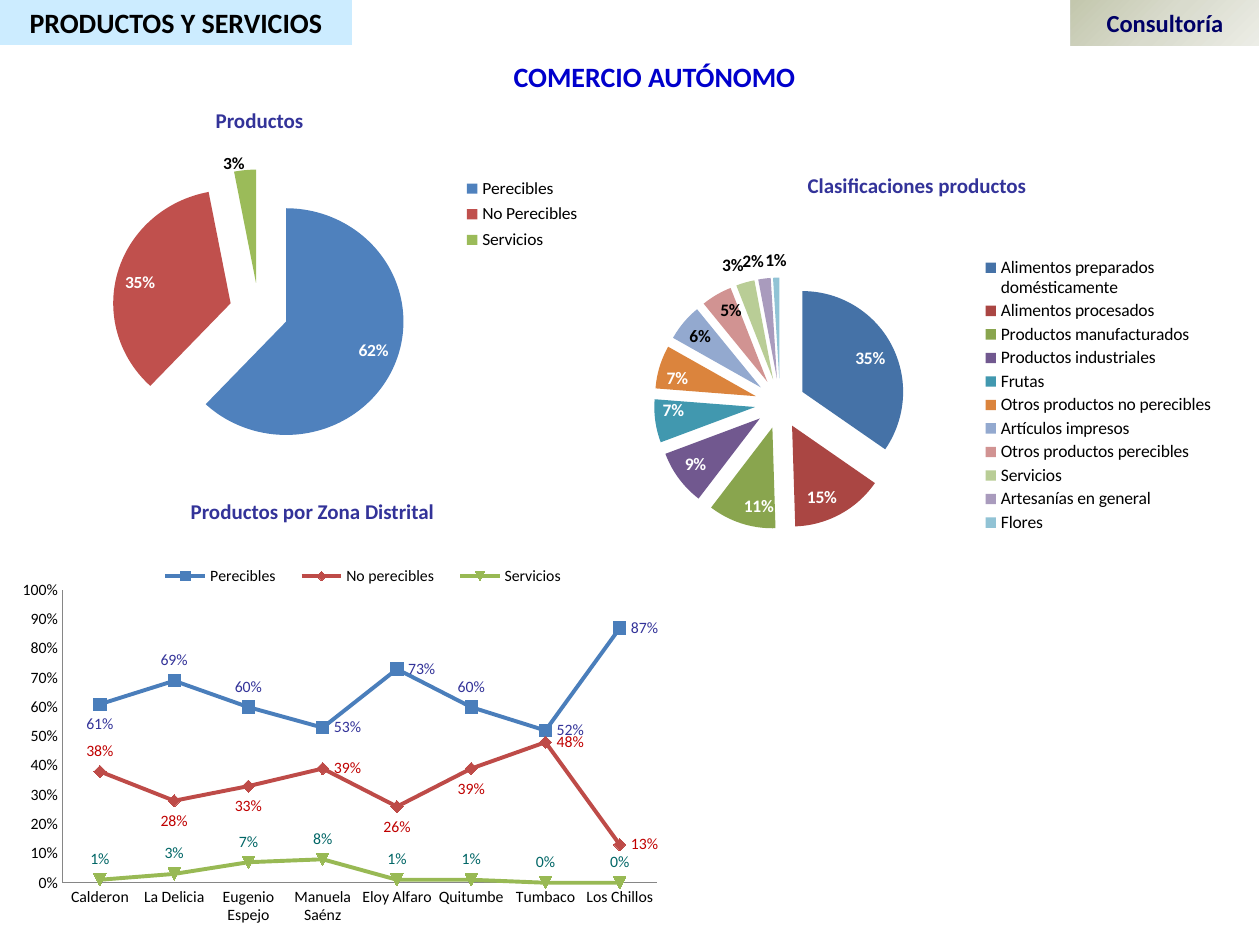
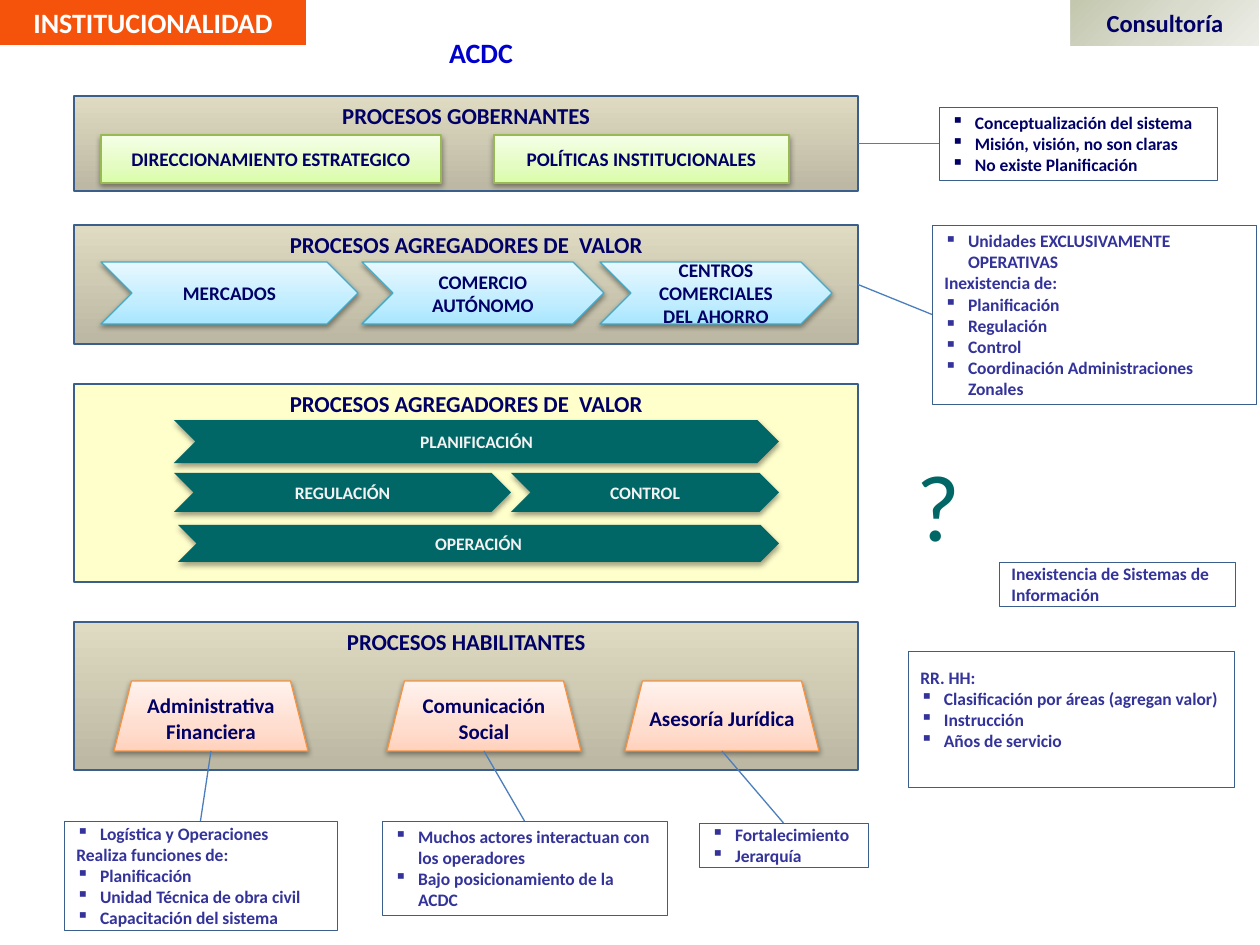
from dataclasses import dataclass

from pptx import Presentation
from pptx.chart.data import CategoryChartData
from pptx.dml.color import RGBColor
from pptx.enum.chart import XL_CHART_TYPE as Chart, XL_LABEL_POSITION as Spot
from pptx.enum.chart import XL_LEGEND_POSITION as LegendSide, XL_TICK_MARK as Tick
from pptx.enum.shapes import MSO_CONNECTOR as Link, MSO_SHAPE as Preset
from pptx.enum.text import MSO_ANCHOR as Anchor, PP_ALIGN as Align
from pptx.oxml import parse_xml
from pptx.oxml.ns import nsdecls, qn
from pptx.util import Pt

PX = 914400 / 126


@dataclass(frozen=True)
class Theme:
    font: str = "Calibri"
    navy: str = "000066"
    indigo: str = "333399"
    blue: str = "0000CC"
    teal: str = "006666"
    black: str = "000000"
    white: str = "FFFFFF"
    pale: str = "F2F2F2"
    sky: str = "CCECFF"
    orange: str = "F5530B"
    cream: str = "FFFFCC"
    red: str = "C00000"
    outline: str = "3A5F8C"
    link: str = "4B7EBC"
    axis: str = "868686"
    stone: tuple = ((4, "BCB8A3"), (99, "DFDBC2"))
    lime: tuple = ((0, "DAFDA7"), (35, "E4FCC2"), (100, "F5FFE7"))
    aqua: tuple = ((0, "A7E6FF"), (35, "C1EDFF"), (100, "E7F8FF"))
    peach: tuple = ((0, "FFD2BD"), (35, "FFDED0"), (100, "FFF2ED"))
    sage: tuple = ((0, "C3C7AD"), (50, "D9DBCD"), (100, "ECEDE6"))
    trio: tuple = ("4F81BD", "C0504D", "9BBB59")
    lines: tuple = ("4A7EBB", "BE4B48", "98B954")
    eleven: tuple = ("4572A7", "AA4643", "89A54E", "71588F", "4198AF", "DB843D",
                     "93A9CF", "D19392", "B9CD96", "A99BBD", "91C3D5")
    tiny: int = 9
    small: int = 10
    item: int = 11
    caption: int = 12
    panel: int = 13
    brand: int = 14
    title: int = 16
    huge: int = 54


T = Theme()
UP = '<a:lin ang="16200000" scaled="0"/>'
RADIAL = '<a:path path="circle"><a:fillToRect r="100000" b="100000"/></a:path>'
LOOKS = {
    "title": dict(size=T.title, color=T.blue, anchor=Anchor.TOP),
    "caption": dict(size=T.caption, color=T.indigo, anchor=Anchor.TOP),
    "doubt": dict(size=T.huge, color=T.teal, anchor=Anchor.TOP, bold=False),
    "products": dict(size=T.title, color=T.black, fill=T.sky),
    "institution": dict(size=T.title, color=T.white, fill=T.orange),
    "brand": dict(size=T.brand, color=T.navy, fill=T.sage, sweep=RADIAL),
    "stone": dict(size=T.panel, color=T.navy, fill=T.stone, line=T.outline, anchor=Anchor.TOP),
    "cream": dict(size=T.panel, color=T.navy, fill=T.cream, line=T.outline, anchor=Anchor.TOP),
    "lime": dict(size=T.item, color=T.navy, fill=T.lime, line="98B955", shadow=True),
    "aqua": dict(size=T.item, color=T.navy, fill=T.aqua, line="46AAC5", shadow=True),
    "peach": dict(size=T.caption, color=T.navy, fill=T.peach, line="F69240", shadow=True),
    "teal": dict(size=T.small, color=T.pale, fill=T.teal, shadow=True),
    "note": dict(size=T.small, color=T.indigo, fill=T.white, line=T.outline,
                 weight=0.25, align=Align.LEFT),
}
LOOKS["navy note"] = LOOKS["note"] | dict(color=T.navy)


def block(shapes, preset, place, text, look, bottom=6):
    style = LOOKS[look]
    box = [round(n * PX) for n in place]
    if preset is None:
        shape = shapes.add_textbox(*box)
    else:
        shape = shapes.add_shape(preset, *box)
        shape.shadow.inherit = False
        if isinstance(style["fill"], str):
            shape.fill.solid()
            shape.fill.fore_color.rgb = RGBColor.from_string(style["fill"])
        else:
            stops = "".join(f'<a:gs pos="{at * 1000}"><a:srgbClr val="{tone}"/></a:gs>'
                            for at, tone in style["fill"])
            shape.fill.background()
            blank = shape._element.spPr.find(qn("a:noFill"))
            blank.getparent().replace(blank, parse_xml(
                f'<a:gradFill {nsdecls("a")} rotWithShape="1"><a:gsLst>{stops}</a:gsLst>'
                f'{style.get("sweep", UP)}</a:gradFill>'))
        if "line" in style:
            shape.line.color.rgb = RGBColor.from_string(style["line"])
            shape.line.width = Pt(style.get("weight", 0.75))
        else:
            shape.line.fill.background()
        if "shadow" in style:
            shape._element.spPr.find(qn("a:effectLst")).append(parse_xml(
                f'<a:outerShdw {nsdecls("a")} blurRad="40000" dist="20000" dir="5400000" '
                'rotWithShape="0"><a:srgbClr val="000000"><a:alpha val="38000"/>'
                '</a:srgbClr></a:outerShdw>'))
    frame = shape.text_frame
    for name, value in dict(word_wrap=True, margin_bottom=round(bottom * PX),
                            vertical_anchor=style.get("anchor", Anchor.MIDDLE)).items():
        setattr(frame, name, value)
    for number, words in enumerate(text.split("\n")):
        paragraph = frame.add_paragraph() if number else frame.paragraphs[0]
        paragraph.alignment = style.get("align", Align.CENTER)
        run = paragraph.add_run()
        run.text = words.lstrip("▪")
        for name, value in dict(name=T.font, size=Pt(style["size"]),
                                bold=style.get("bold", True)).items():
            setattr(run.font, name, value)
        run.font.color.rgb = RGBColor.from_string(style["color"])
        if words.startswith("▪"):
            props = paragraph._p.get_or_add_pPr()
            props.set("marL", "171450")
            props.set("indent", "-171450")
            props.append(parse_xml(f'<a:buChar {nsdecls("a")} char="▪"/>'))
    return shape


def add_graph(shapes, kind, place, data, size, plot_area, legend_area, side):
    chart = shapes.add_chart(kind, *[round(n * PX) for n in place], data).chart
    chart.has_title = False
    chart.has_legend = True
    chart.legend.position = side
    chart.legend.include_in_layout = False
    for name, value in dict(name=T.font, size=Pt(size)).items():
        setattr(chart.font, name, value)
    chart.font.color.rgb = RGBColor.from_string(T.black)
    space = chart._chartSpace
    for tag, index, target, area in (("c:plotArea", 0, '<c:layoutTarget val="inner"/>', plot_area),
                                     ("c:legend", 1, "", legend_area)):
        part = next(space.iter(qn(tag)))
        for old in part.findall(qn("c:layout")):
            part.remove(old)
        x, y, w, h = area
        part.insert(index, parse_xml(
            f'<c:layout {nsdecls("c")}><c:manualLayout>{target}<c:xMode val="edge"/>'
            f'<c:yMode val="edge"/><c:x val="{x}"/><c:y val="{y}"/><c:w val="{w}"/>'
            f'<c:h val="{h}"/></c:manualLayout></c:layout>'))
    return chart


deck = Presentation()
deck.slide_width, deck.slide_height = round(1260 * PX), round(945 * PX)
commerce, agency = [deck.slides.add_slide(deck.slide_layouts[6]).shapes for _ in range(2)]
for page, band, width, look in ((commerce, "PRODUCTOS Y SERVICIOS", 352, "products"),
                                (agency, "INSTITUCIONALIDAD", 306, "institution")):
    block(page, Preset.RECTANGLE, (0, 0, width, 45), band, look)
    block(page, Preset.RECTANGLE, (1071, 0, 188, 46), "Consultoría", "brand")

for place, words, look in (((461, 53, 387, 47), "COMERCIO AUTÓNOMO", "title"),
                           ((748, 166, 338, 38), "Clasificaciones productos", "caption"),
                           ((111, 101, 297, 38), "Productos", "caption"),
                           ((164, 492, 297, 38), "Productos por Zona Distrital", "caption")):
    block(commerce, None, place, words, look)

inside, outside = Spot.INSIDE_END, Spot.OUTSIDE_END
pies = (
    ((54, 144, 532, 309), (0, 0.05, 0.77, 0.95), (0.76, 0.06, 0.25, 0.28), T.trio,
     (("Perecibles", 62), ("No Perecibles", 35), ("Servicios", 3)), 2, 2),
    ((551, 234, 684, 336), (0.15, 0.13, 0.37, 0.75), (0.62, 0.06, 0.36, 0.84), T.eleven,
     (("Alimentos preparados domésticamente", 35), ("Alimentos procesados", 15),
      ("Productos manufacturados", 11), ("Productos industriales", 9), ("Frutas", 7),
      ("Otros productos no perecibles", 7), ("Artículos impresos", 6),
      ("Otros productos perecibles", 5), ("Servicios", 3), ("Artesanías en general", 2),
      ("Flores", 1)), 6, 8),
)
for place, plot_area, legend_area, tones, shares, white_labels, inner_labels in pies:
    data = CategoryChartData(number_format="0")
    data.categories = [name for name, _ in shares]
    data.add_series("Series 1", [share for _, share in shares])
    pie = add_graph(commerce, Chart.PIE, place, data, T.small, plot_area, legend_area,
                    LegendSide.RIGHT)
    pie.plots[0].vary_by_categories = True
    slices = pie.plots[0].series[0]
    slices._element.find(qn("c:tx")).addnext(parse_xml(f'<c:explosion {nsdecls("c")} val="25"/>'))
    for number, tone in enumerate(tones):
        point = slices.points[number]
        point.format.fill.solid()
        point.format.fill.fore_color.rgb = RGBColor.from_string(tone)
        label = point.data_label
        for name, value in dict(name=T.font, size=Pt(T.small), bold=True).items():
            setattr(label.font, name, value)
        label.font.color.rgb = RGBColor.from_string(T.white if number < white_labels else T.black)
        label.position = inside if number < inner_labels else outside
    for mark in slices._element.iter(qn("c:dLbl")):
        mark.find(qn("c:showVal")).set("val", "0")
        mark.find(qn("c:showPercent")).set("val", "1")

over, under, right = Spot.ABOVE, Spot.BELOW, Spot.RIGHT
zones = (
    ("Perecibles", (0.61, 0.69, 0.6, 0.53, 0.73, 0.6, 0.52, 0.87), T.indigo,
     (under, over, over, right, right, over, right, right)),
    ("No perecibles", (0.38, 0.28, 0.33, 0.39, 0.26, 0.39, 0.48, 0.13), T.red,
     (over, under, under, right, under, under, right, right)),
    ("Servicios", (0.01, 0.03, 0.07, 0.08, 0.01, 0.01, 0, 0), T.teal, (over,) * 8),
)
data = CategoryChartData(number_format="0%")
data.categories = ["Calderon", "La Delicia", "Eugenio Espejo", "Manuela Saénz",
                   "Eloy Alfaro", "Quitumbe", "Tumbaco", "Los Chillos"]
for name, values, _, _ in zones:
    data.add_series(name, values)
districts = add_graph(commerce, Chart.LINE_MARKERS, (15, 530, 683, 401), data, T.tiny,
                      (0.07, 0.15, 0.87, 0.73), (0.19, 0.08, 0.64, 0.07), LegendSide.TOP)
for series, tone, (_, _, ink, spots) in zip(districts.plots[0].series, T.lines, zones):
    series.smooth = False
    series.format.line.width = Pt(2.25)
    series.format.line.color.rgb = RGBColor.from_string(tone)
    series.marker.size = 7
    series.marker.format.fill.solid()
    series.marker.format.fill.fore_color.rgb = RGBColor.from_string(tone)
    series.marker.format.line.color.rgb = RGBColor.from_string(tone)
    for number, spot in enumerate(spots):
        label = series.points[number].data_label
        label.font.name, label.font.size = T.font, Pt(T.tiny)
        label.font.color.rgb = RGBColor.from_string(ink)
        label.position = spot
for axis in (districts.category_axis, districts.value_axis):
    for name, value in dict(has_major_gridlines=False, major_tick_mark=Tick.NONE,
                            minor_tick_mark=Tick.NONE).items():
        setattr(axis, name, value)
    axis.format.line.color.rgb = RGBColor.from_string(T.axis)
for name, value in dict(minimum_scale=0, maximum_scale=1, major_unit=0.1).items():
    setattr(districts.value_axis, name, value)
districts.value_axis.tick_labels.number_format = "0%"
districts.value_axis.tick_labels.number_format_is_linked = False

block(agency, None, (312, 29, 338, 47), "ACDC", "title")
block(agency, None, (858, 441, 161, 127), "?", "doubt")

processes = (
    (96, 95, "PROCESOS GOBERNANTES", "stone", Preset.RECTANGLE, "lime",
     (((101, 135, 340, 48), "DIRECCIONAMIENTO ESTRATEGICO"),
      ((494, 135, 295, 48), "POLÍTICAS INSTITUCIONALES"))),
    (225, 119, "PROCESOS AGREGADORES DE  VALOR", "stone", Preset.CHEVRON, "aqua",
     (((101, 262, 257, 62), "MERCADOS"), ((362, 262, 242, 62), "COMERCIO AUTÓNOMO"),
      ((600, 262, 232, 62), "CENTROS COMERCIALES DEL AHORRO"))),
    (384, 198, "PROCESOS AGREGADORES DE  VALOR", "cream", Preset.CHEVRON, "teal",
     (((174, 420, 605, 43), "PLANIFICACIÓN"), ((174, 473, 337, 39), "REGULACIÓN"),
      ((511, 473, 268, 39), "CONTROL"), ((178, 525, 601, 37), "OPERACIÓN"))),
    (622, 148, "PROCESOS HABILITANTES", "stone", Preset.TRAPEZOID, "peach",
     (((114, 681, 194, 70), "Administrativa Financiera"),
      ((387, 681, 194, 70), "Comunicación Social"),
      ((625, 681, 194, 70), "Asesoría Jurídica"))),
)
panels, steps = [], []
for top, height, heading, look, preset, step_look, parts in processes:
    group = agency.add_group_shape().shapes
    panels.append(block(group, Preset.RECTANGLE, (74, top, 784, height), heading, look))
    steps.append([block(group, preset, place, words, step_look) for place, words in parts])

remarks = (
    ((939, 107, 278, 73), "▪Conceptualización del sistema\n▪Misión, visión, no son claras\n"
     "▪No existe Planificación", "navy note", 6),
    ((932, 225, 324, 179), "▪Unidades EXCLUSIVAMENTE OPERATIVAS\nInexistencia de:\n"
     "▪Planificación\n▪Regulación\n▪Control\n▪Coordinación Administraciones Zonales", "note", 6),
    ((64, 821, 273, 109), "▪Logística y Operaciones\nRealiza funciones de:\n▪Planificación\n"
     "▪Unidad Técnica de obra civil\n▪Capacitación del sistema", "note", 6),
    ((382, 821, 285, 94), "▪Muchos actores interactuan con los operadores\n"
     "▪Bajo posicionamiento de la ACDC", "note", 6),
    ((699, 823, 169, 44), "▪Fortalecimiento\n▪Jerarquía", "note", 6),
    ((999, 562, 236, 44), "Inexistencia de Sistemas de Información", "note", 6),
    ((908, 651, 326, 136), "RR. HH:\n▪Clasificación por áreas (agregan valor)\n"
     "▪Instrucción\n▪Años de servicio", "note", 27),
)
notes = [block(agency, Preset.RECTANGLE, *remark) for remark in remarks]

sources = [(panel, 3, 1) for panel in panels[:2]] + [(step, 2, 0) for step in steps[3]]
for (source, leave, arrive), note in zip(sources, notes):
    link = agency.add_connector(Link.STRAIGHT, 0, 0, 0, 0)
    link.begin_connect(source, leave)
    link.end_connect(note, arrive)
    link.line.color.rgb = RGBColor.from_string(T.link)
    link.line.width = Pt(0.75)
    link._element.spPr.append(parse_xml(f'<a:effectLst {nsdecls("a")}/>'))

deck.save("out.pptx")
